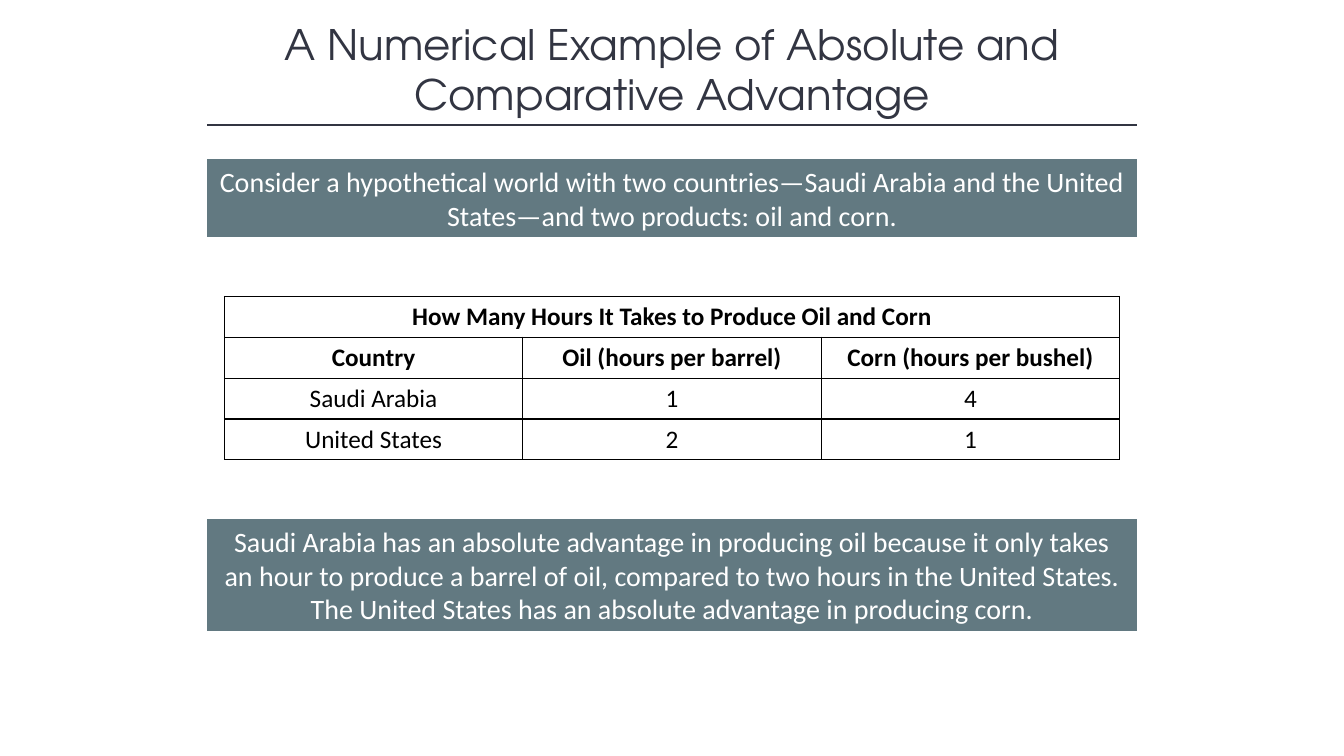
from lxml import etree
from pptx import Presentation
from pptx.dml.color import RGBColor
from pptx.enum.shapes import MSO_CONNECTOR, MSO_SHAPE
from pptx.enum.text import MSO_ANCHOR, PP_ALIGN
from pptx.oxml.ns import qn
from pptx.util import Inches, Pt

RECT = MSO_SHAPE.RECTANGLE
LINE = MSO_CONNECTOR.STRAIGHT
CENTER = PP_ALIGN.CENTER
MIDDLE = MSO_ANCHOR.MIDDLE

# Content
TITLE = "A Numerical Example of Absolute and Comparative Advantage"
ROWS = [
    ("How Many Hours It Takes to Produce Oil and Corn", "", ""),
    ("Country", "Oil (hours per barrel)", "Corn (hours per bushel)"),
    ("Saudi Arabia", "1", "4"),
    ("United States", "2", "1"),
]
# Bands: top, height, text
BANDS = [
    (1.58, 0.77, "Consider a hypothetical world with two countries—Saudi Arabia "
     "and the United States—and two products: oil and corn."),
    (5.15, 1.11, "Saudi Arabia has an absolute advantage in producing oil because "
     "it only takes an hour to produce a barrel of oil, compared to two hours in "
     "the United States. The United States has an absolute advantage in "
     "producing corn."),
]
INK, SLATE, WHITE, BLACK = "323542", "627981", "FFFFFF", "000000"

# Layout: every part is centred on the slide
WIDE, HIGH = 13.33, 7.5
TITLE_W, BAND_W = 10, 9.22
COL_W, ROW_H = 2.96, 0.405
RULE_Y, GRID_Y = 1.24, 2.94


def color(code):
    return RGBColor.from_string(code)


def left(width):
    return Inches((WIDE - width) / 2)


def write(frame, text, size=20, font="Calibri", ink=WHITE, bold=False):
    frame.word_wrap = True
    para = frame.paragraphs[0]
    para.alignment = CENTER
    run = para.add_run()
    run.text = text
    run.font.size, run.font.name, run.font.bold = Pt(size), font, bold
    run.font.color.rgb = color(ink)


def border(cell, code, width):
    props = cell._tc.get_or_add_tcPr()
    for at, side in enumerate(("lnL", "lnR", "lnT", "lnB")):
        edge = etree.Element(qn("a:" + side), w=str(Pt(width)))
        fill = etree.SubElement(edge, qn("a:solidFill"))
        etree.SubElement(fill, qn("a:srgbClr"), val=code)
        props.insert(at, edge)


deck = Presentation()
deck.slide_width, deck.slide_height = Inches(WIDE), Inches(HIGH)
slide = deck.slides.add_slide(deck.slide_layouts[5])
shapes = slide.shapes

# Title and rule
title = shapes.title
title.left, title.top = left(TITLE_W), Inches(0.13)
title.width, title.height = Inches(TITLE_W), Inches(1.11)
title.text_frame.vertical_anchor = MIDDLE
write(title.text_frame, TITLE, size=30, font="TeX Gyre Adventor", ink=INK)

start = left(BAND_W)
rule = shapes.add_connector(LINE, start, Inches(RULE_Y),
                            start + Inches(BAND_W), Inches(RULE_Y))
rule.line.color.rgb = color(INK)
rule.line.width = Pt(1)
etree.SubElement(rule._element.spPr, qn("a:effectLst"))

# Text bands
for top, height, text in BANDS:
    band = shapes.add_shape(RECT, start, Inches(top), Inches(BAND_W), Inches(height))
    band.shadow.inherit = False
    band.fill.solid()
    band.fill.fore_color.rgb = color(SLATE)
    band.line.fill.background()
    write(band.text_frame, text)

# Table of hours
count, span = len(ROWS), len(ROWS[0])
grid_w = COL_W * span
grid = shapes.add_table(count, span, left(grid_w), Inches(GRID_Y),
                        Inches(grid_w), Inches(ROW_H * count)).table
for col in grid.columns:
    col.width = Inches(COL_W)
for r, row in enumerate(ROWS):
    grid.rows[r].height = Inches(ROW_H)
    for c, text in enumerate(row):
        cell = grid.cell(r, c)
        cell.fill.background()
        cell.vertical_anchor = MIDDLE
        border(cell, BLACK, 1)
        if text:
            write(cell.text_frame, text, size=18, ink=BLACK, bold=r < 2)
grid.cell(0, 0).merge(grid.cell(0, span - 1))

deck.save("out.pptx")
